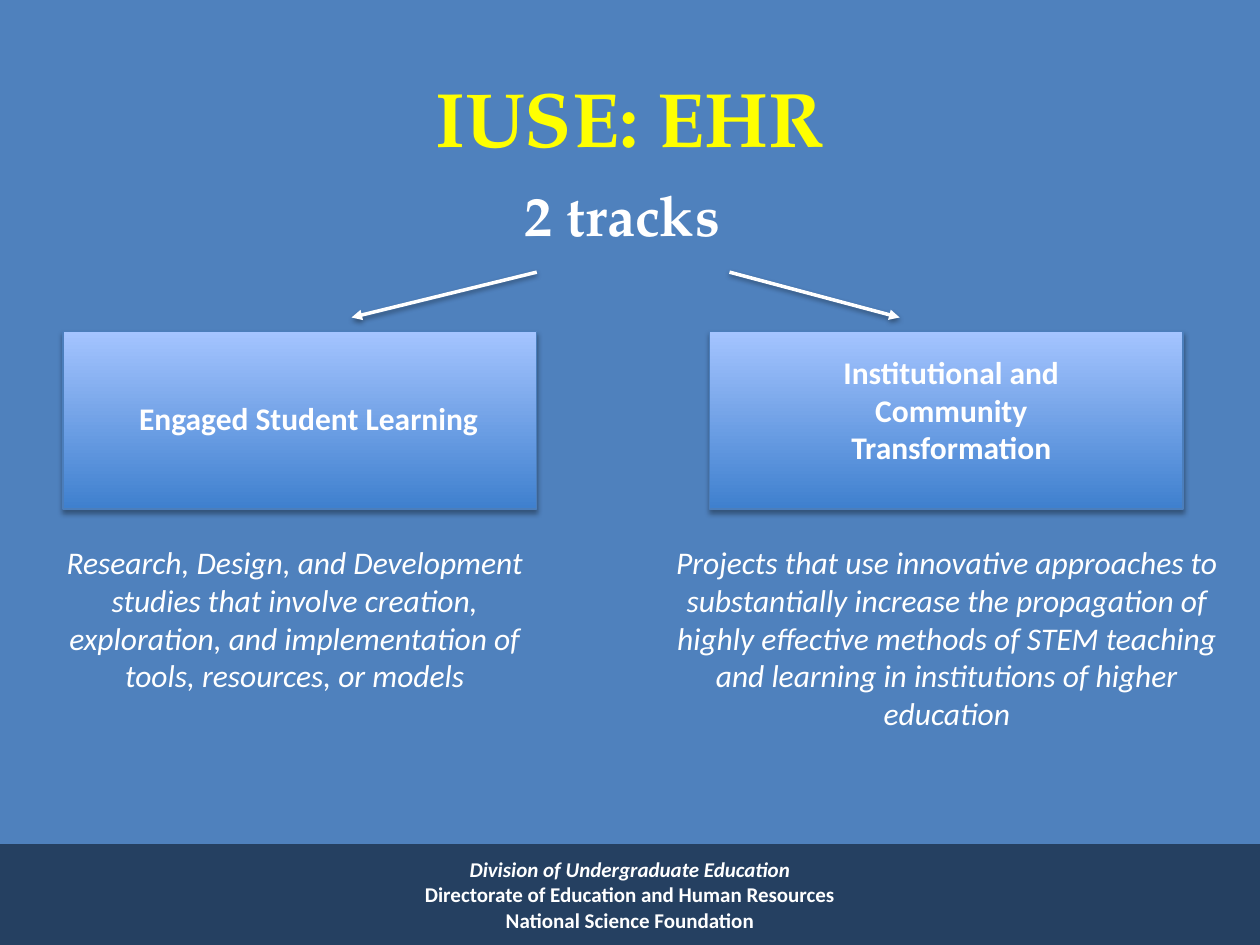
from lxml import etree
from pptx import Presentation
from pptx.dml.color import RGBColor
from pptx.enum.shapes import MSO_CONNECTOR, MSO_SHAPE
from pptx.enum.text import MSO_ANCHOR as Anchor, PP_ALIGN as Align
from pptx.oxml import parse_xml
from pptx.oxml.ns import nsdecls, qn
from pptx.util import Inches, Pt

WHITE = RGBColor(0xFF, 0xFF, 0xFF)
YELLOW = RGBColor(0xFF, 0xFF, 0x00)
BACKGROUND = RGBColor(0x4F, 0x81, 0xBD)
FOOTER_FILL = RGBColor(0x25, 0x40, 0x61)
BOX_LINE = RGBColor(0x4B, 0x7E, 0xBC)
BOX_GRADIENT = RGBColor(0x3F, 0x80, 0xCE), RGBColor(0xA4, 0xC4, 0xFF)
SERIF, SANS = "TeX Gyre Pagella", "Calibri"

WIDTH, HEIGHT = 10, 7.5
FOOTER_HEIGHT = 0.8
BOX_TOP, BOX_WIDTH, BOX_HEIGHT = 2.63, 3.76, 1.41
ARROW_TOP, ARROW_BOTTOM = 2.16, 2.52
DESCRIPTION_TOP = 4.26

TITLE = "IUSE: EHR"
SUBTITLE = "2 tracks"
FOOTER = [
    "Division of Undergraduate Education",
    "Directorate of Education and Human Resources",
    "National Science Foundation",
]
TRACKS = [
    {
        "label": "Engaged Student Learning",
        "description": "Research, Design, and Development studies that involve "
        "creation, exploration, and implementation of tools, resources, or models",
        "box_left": 0.5,
        "label_area": (0.98, 3.12, 2.94, 0.4),
        "description_area": (0.2, DESCRIPTION_TOP, 4.28, 1.62),
        "arrow": (4.26, 2.79),
    },
    {
        "label": "Institutional and Community Transformation",
        "description": "Projects that use innovative approaches to substantially "
        "increase the propagation of highly effective methods of STEM teaching "
        "and learning in institutions of higher education",
        "box_left": 5.63,
        "label_area": (6.06, 2.75, 2.98, 1.01),
        "description_area": (5.26, DESCRIPTION_TOP, 4.51, 1.92),
        "arrow": (5.79, 7.14),
    },
]


def inches(values):
    return [Inches(value) for value in values]


def write(shape, lines, size, font=SANS, color=WHITE, bold=False, italic=False,
          anchor=Anchor.TOP):
    frame = shape.text_frame
    frame.text = "\n".join(lines)
    frame.word_wrap = True
    frame.vertical_anchor = anchor
    for paragraph in frame.paragraphs:
        paragraph.alignment = Align.CENTER
        for run in paragraph.runs:
            run.font.name, run.font.size = font, Pt(size)
            run.font.color.rgb = color
            run.font.bold, run.font.italic = bold, italic


def add_text(slide, area, text, size, **style):
    write(slide.shapes.add_textbox(*inches(area)), [text], size, **style)


def add_shadow(shape, distance, opacity):
    properties = shape._element.spPr
    for effects in properties.findall(qn("a:effectLst")):
        properties.remove(effects)
    properties.append(parse_xml(
        f'<a:effectLst {nsdecls("a")}><a:outerShdw blurRad="{Pt(3.1)}" '
        f'dist="{Pt(distance)}" dir="5400000" rotWithShape="0"><a:srgbClr val="000000">'
        f'<a:alpha val="{opacity * 1000}"/></a:srgbClr></a:outerShdw></a:effectLst>'))


def add_box(slide, left):
    area = left, BOX_TOP, BOX_WIDTH, BOX_HEIGHT
    box = slide.shapes.add_shape(MSO_SHAPE.RECTANGLE, *inches(area))
    box.fill.gradient()
    box.fill.gradient_angle = 90
    for stop, color, position in zip(box.fill.gradient_stops, BOX_GRADIENT, (0, 1)):
        stop.color.rgb, stop.position = color, position
    box.line.color.rgb, box.line.width = BOX_LINE, Pt(0.75)
    add_shadow(box, 1.8, 35)


def add_arrow(slide, start, end):
    points = start, ARROW_TOP, end, ARROW_BOTTOM
    arrow = slide.shapes.add_connector(MSO_CONNECTOR.STRAIGHT, *inches(points))
    arrow.line.color.rgb, arrow.line.width = WHITE, Pt(2)
    line = arrow._element.spPr.find(qn("a:ln"))
    etree.SubElement(line, qn("a:tailEnd"), type="triangle")
    add_shadow(arrow, 1.6, 38)


def add_footer(slide):
    area = 0, HEIGHT - FOOTER_HEIGHT, WIDTH, FOOTER_HEIGHT
    footer = slide.shapes.add_shape(MSO_SHAPE.RECTANGLE, *inches(area))
    footer.shadow.inherit = False
    footer.fill.solid()
    footer.fill.fore_color.rgb = FOOTER_FILL
    footer.line.fill.background()
    write(footer, FOOTER, 12, bold=True, anchor=Anchor.MIDDLE)
    footer.text_frame.paragraphs[0].runs[0].font.italic = True


def main():
    presentation = Presentation()
    presentation.slide_width, presentation.slide_height = inches((WIDTH, HEIGHT))
    slide = presentation.slides.add_slide(presentation.slide_layouts[6])
    slide.background.fill.solid()
    slide.background.fill.fore_color.rgb = BACKGROUND

    add_footer(slide)
    add_text(slide, (0.5, 0.3, 9, 1.25), TITLE, 44, font=SERIF, color=YELLOW,
             bold=True, anchor=Anchor.MIDDLE)
    add_text(slide, (0.44, 1.38, 9, 1.72), SUBTITLE, 32, font=SERIF, bold=True)
    for track in TRACKS:
        add_arrow(slide, *track["arrow"])
        add_box(slide, track["box_left"])
        add_text(slide, track["label_area"], track["label"], 18, bold=True)
        add_text(slide, track["description_area"], track["description"], 18, italic=True)

    presentation.save("out.pptx")


if __name__ == "__main__":
    main()
